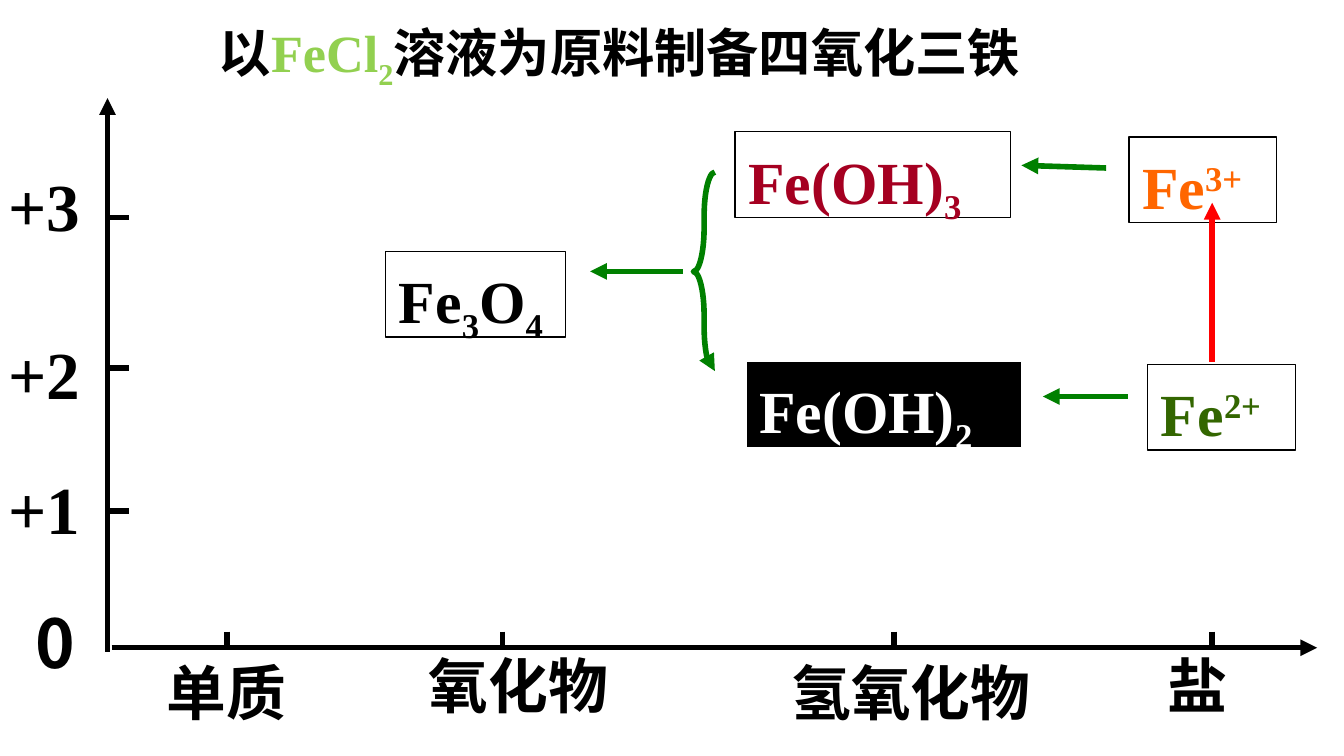
"""Build a valence and category map for preparing iron oxide from an iron salt solution."""
from lxml import etree
from pptx import Presentation
from pptx.dml.color import RGBColor
from pptx.enum.shapes import MSO_CONNECTOR, MSO_SHAPE
from pptx.enum.text import MSO_ANCHOR, PP_ALIGN
from pptx.oxml.ns import qn
from pptx.util import Pt

STRAIGHT = MSO_CONNECTOR.STRAIGHT
RECTANGLE = MSO_SHAPE.RECTANGLE
BRACE = MSO_SHAPE.RIGHT_BRACE
TOP, MIDDLE = MSO_ANCHOR.TOP, MSO_ANCHOR.MIDDLE
LEFT, CENTER = PP_ALIGN.LEFT, PP_ALIGN.CENTER

SERIF, SANS, HAN = "Times New Roman", "Calibri", "Noto Sans CJK SC"
SUB, SUPER = -25000, 30000
LINE_WIDTH = 3
AXIS_X, AXIS_Y = 57.6, 347

COLORS = {
    "black": "000000", "white": "FFFFFF", "red": "FF0000", "green": "008000",
    "crimson": "A50021", "orange": "FF6600", "olive": "336600", "lime": "92D050",
}

CATEGORIES = [
    ("单质", 121.7, 82.1, 351.4, 96.5),
    ("氧化物", 269.3, 222.5, 347.8, 130.3),
    ("氢氧化物", 478.8, 416.9, 351.4, 153.4),
    ("盐", 649.4, 618.5, 347.8, 68.4),
]
VALENCES = [("+3", 116.6, 90.7), ("+2", 197.3, 180.7), ("+1", 273.6, 252.7)]
SUBSTANCES = [
    ([("Fe(OH)", 0), ("2", SUB)], (399.6, 193.7, 147.6, 46), "white", "black", "white"),
    ([("Fe(OH)", 0), ("3", SUB)], (393.8, 70.6, 147.6, 46), "crimson", None, "black"),
    ([("Fe", 0), ("3", SUB), ("O", 0), ("4", SUB)], (206.6, 134.6, 96.5, 46),
     "black", None, "black"),
    ([("Fe", 0), ("3+", SUPER)], (604.8, 73.4, 79.2, 46), "orange", None, "black"),
    ([("Fe", 0), ("2+", SUPER)], (614.9, 195.1, 79.2, 46), "olive", None, "black"),
]
REACTIONS = [
    ((649.4, 193.7), (649.4, 108.7), "red"),
    ((592.6, 90), (547.2, 88.6), "green"),
    ((604.1, 212.4), (558.7, 212.4), "green"),
    ((365.8, 145.4), (316.1, 145.4), "green"),
]
TITLE = [
    ("以", 0, HAN, "black"), ("FeCl", 0, SERIF, "lime"), ("2", SUB, SERIF, "lime"),
    ("溶液", 0, SERIF, "black"), ("为原料制备四氧化三铁", 0, HAN, "black"),
]


def color(name):
    """Return the named colour."""
    return RGBColor.from_string(COLORS[name])


def set_line(shape, name, width, arrow=False):
    """Style an outline, with an arrowhead at its end if wanted."""
    shape.line.color.rgb = color(name)
    shape.line.width = Pt(width)
    if arrow:
        etree.SubElement(shape.line._get_or_add_ln(), qn("a:tailEnd"), type="triangle")


def add_line(slide, start, end, name="black", arrow=False):
    """Draw a straight line between two points."""
    connector = slide.shapes.add_connector(STRAIGHT, *map(Pt, start + end))
    set_line(connector, name, LINE_WIDTH, arrow)
    etree.SubElement(connector._element.spPr, qn("a:effectLst"))


def write_text(shape, runs, size, top_inset=0, anchor=TOP, align=LEFT, wrap=True):
    """Fill a shape with one paragraph of (text, baseline, font, colour) runs."""
    frame_format = {"word_wrap": wrap, "vertical_anchor": anchor,
                    "margin_top": Pt(top_inset), "margin_bottom": 0}
    for key, value in frame_format.items():
        setattr(shape.text_frame, key, value)
    paragraph = shape.text_frame.paragraphs[0]
    paragraph.alignment = align
    for text, baseline, font_name, color_name in runs:
        run = paragraph.add_run()
        run.text = text
        for key, value in {"size": Pt(size), "bold": True, "name": font_name}.items():
            setattr(run.font, key, value)
        run.font.color.rgb = color(color_name)
        properties = run._r.get_or_add_rPr()
        etree.SubElement(properties, qn("a:ea"), typeface=HAN)
        if baseline:
            properties.set("baseline", str(baseline))


def add_label(slide, text, bounds, size, font_name, **layout):
    """Add a plain black label."""
    box = slide.shapes.add_textbox(*map(Pt, bounds))
    write_text(box, [(text, 0, font_name, "black")], size, **layout)


def add_box(slide, bounds, fill=None, outline=None, preset=RECTANGLE):
    """Add a flat preset shape with an optional fill and thin outline."""
    shape = slide.shapes.add_shape(preset, *map(Pt, bounds))
    shape.shadow.inherit = False
    if fill:
        shape.fill.solid()
        shape.fill.fore_color.rgb = color(fill)
    else:
        shape.fill.background()
    if outline:
        set_line(shape, outline, 0.75)
    else:
        shape.line.fill.background()
    return shape


def add_axes(slide):
    """Draw both axes with their ticks and labels."""
    add_line(slide, (59.8, AXIS_Y), (705.6, AXIS_Y), arrow=True)
    add_line(slide, (AXIS_X, 349.2), (AXIS_X, 52.6), arrow=True)
    for text, tick, left, top, width in CATEGORIES:
        add_line(slide, (tick, 338.4), (tick, AXIS_Y))
        add_label(slide, text, (left, top, width, 46), 32, SANS)
    centered = {"anchor": MIDDLE, "align": CENTER, "wrap": False}
    for text, tick, top in VALENCES:
        add_line(slide, (AXIS_X, tick), (69.1, tick))
        add_label(slide, text, (-10, top, 67.7, 38.2), 36, SERIF, **centered)
    add_label(slide, "0", (-4.3, 324.7, 67.7, 38.2), 36, HAN, **centered)


def add_brace(slide):
    """Add the brace that joins the two hydroxides."""
    brace = add_box(slide, (371.5, 92.2, 11.5, 106.6), preset=BRACE)
    brace.adjustments[0] = 2.05
    brace.adjustments[1] = 0.5
    brace._element.spPr.xfrm.set("flipH", "1")
    set_line(brace, "green", LINE_WIDTH, arrow=True)


def main():
    """Build and save the slide."""
    presentation = Presentation()
    presentation.slide_width, presentation.slide_height = Pt(720), Pt(405)
    slide = presentation.slides.add_slide(presentation.slide_layouts[6])
    add_axes(slide)
    for formula, bounds, text_color, fill, outline in SUBSTANCES:
        box = add_box(slide, bounds, fill, outline)
        runs = [(text, baseline, SERIF, text_color) for text, baseline in formula]
        write_text(box, runs, 32, top_inset=6.8)
    for start, end, name in REACTIONS:
        add_line(slide, start, end, name, arrow=True)
    add_brace(slide)
    title = add_box(slide, (110.2, 10.8, 538.6, 41), "white")
    write_text(title, TITLE, 28)
    presentation.save("out.pptx")


if __name__ == "__main__":
    main()
